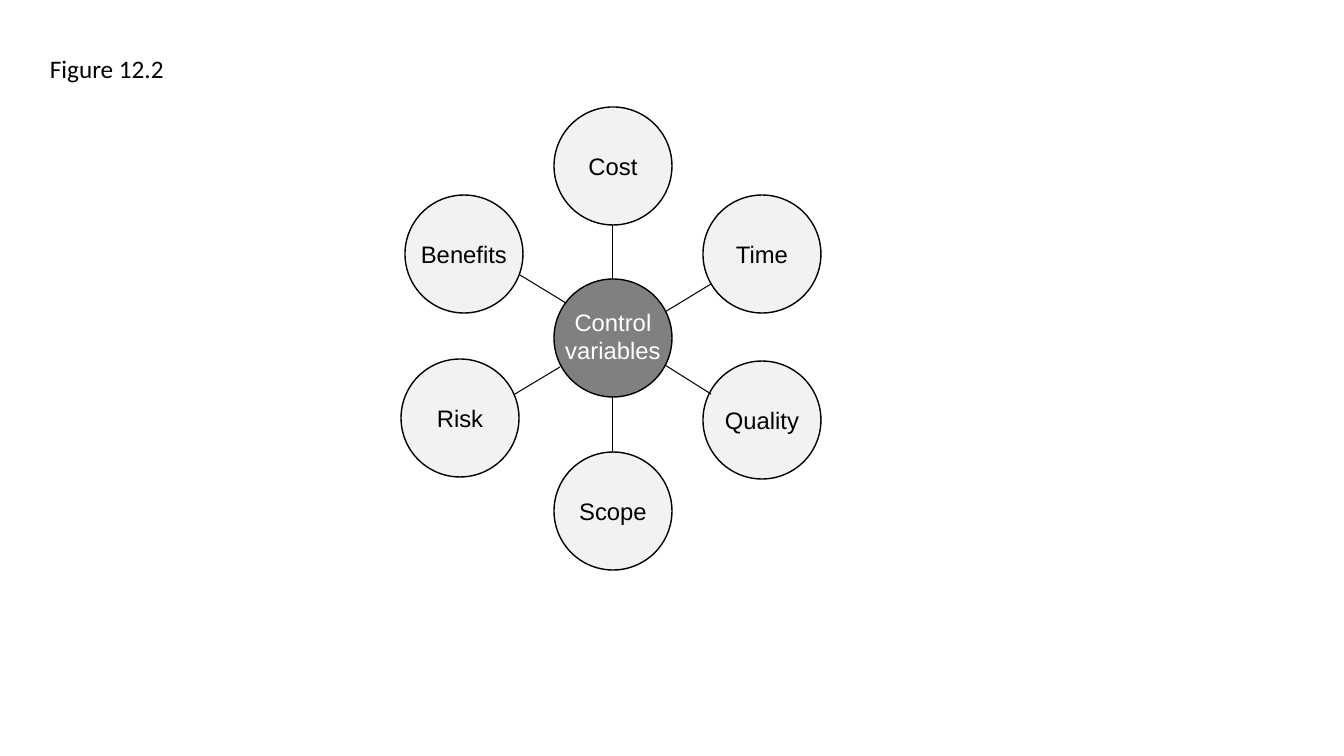
from pptx import Presentation
from pptx import util as u
from pptx.dml.color import RGBColor
from pptx.enum import shapes, text
from pptx.oxml.ns import qn
from lxml import etree

EMU_PER_PX = 914400 / 100.8
COLOURS = {"ink": "000000", "hub": "808080", "variable": "F2F2F2", "light": "FFFFFF"}
DIAMETER = 118
HUB_CENTRE = (613, 338)
VARIABLES = [
    ("Time", (762, 254), (665, 312), (711, 284)),
    ("Risk", (460, 418), (560, 367), (515, 394)),
    ("Cost", (613, 166), (613, 279), (613, 225)),
    ("Scope", (613, 511), (613, 397), (613, 452)),
    ("Quality", (762, 420), (665, 365), (711, 394)),
    ("Benefits", (464, 254), (566, 303), (520, 275)),
]


def px(length):
    return u.Emu(round(length * EMU_PER_PX))


def colour(name):
    return RGBColor.from_string(COLOURS[name])


def style_text(frame, font, size, ink):
    for para in frame.paragraphs:
        for span in para.runs:
            span.font.name = font
            span.font.size = u.Pt(size)
            span.font.color.rgb = colour(ink)


def add_circle(page, label, centre, fill, ink, top_inset):
    left, top = (middle - DIAMETER / 2 for middle in centre)
    circle = page.shapes.add_shape(
        shapes.MSO_SHAPE.OVAL, px(left), px(top), px(DIAMETER), px(DIAMETER))
    circle.shadow.inherit = False
    circle.fill.solid()
    circle.fill.fore_color.rgb = colour(fill)
    circle.line.color.rgb = colour("ink")
    circle.line.width = u.Pt(1)
    frame = circle.text_frame
    frame.text = label
    frame.word_wrap = False
    frame.vertical_anchor = text.MSO_ANCHOR.MIDDLE
    frame.margin_left = frame.margin_right = 0
    frame.margin_top, frame.margin_bottom = px(top_inset), px(4)
    frame.paragraphs[0].alignment = text.PP_ALIGN.CENTER
    style_text(frame, "Arial", 17, ink)


def add_spoke(page, start, end):
    spoke = page.shapes.add_connector(
        shapes.MSO_CONNECTOR.STRAIGHT, *map(px, start + end))
    spoke.line.color.rgb = colour("ink")
    spoke.line.width = u.Pt(0.75)
    etree.SubElement(spoke._element.spPr, qn("a:effectLst"))


def add_caption(page, caption, left, top, width, height):
    box = page.shapes.add_textbox(px(left), px(top), px(width), px(height))
    frame = box.text_frame
    frame.text = caption
    frame.word_wrap = False
    frame.auto_size = text.MSO_AUTO_SIZE.SHAPE_TO_FIT_TEXT
    style_text(frame, "Calibri", 18, "ink")


def main():
    deck = Presentation()
    deck.slide_width, deck.slide_height = px(1344), px(756)
    page = deck.slides.add_slide(deck.slide_layouts[6])
    add_circle(page, "Control\vvariables", HUB_CENTRE, "hub", "light", 0)
    for label, centre, _, _ in VARIABLES:
        add_circle(page, label, centre, "variable", "ink", 4)
    for _, _, hub_rim, variable_rim in VARIABLES:
        add_spoke(page, hub_rim, variable_rim)
    add_caption(page, "Figure 12.2", 40, 48, 135, 40)
    deck.save("out.pptx")


if __name__ == "__main__":
    main()
